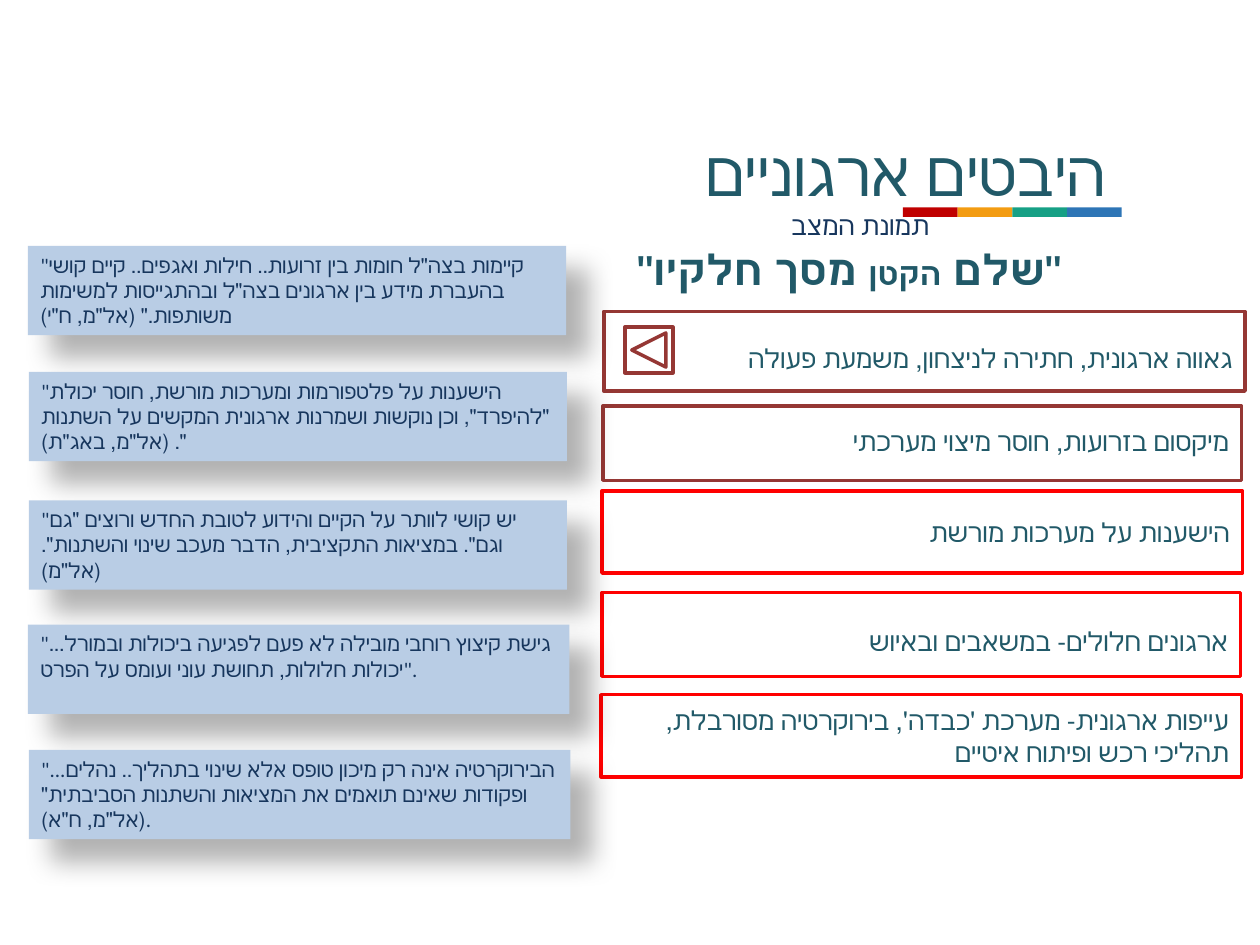
import dataclasses
import typing

import lxml.etree
import pptx
import pptx.dml.color
import pptx.enum.shapes
import pptx.enum.text
import pptx.oxml.ns
import pptx.util

Pt = pptx.util.Pt
RGBColor = pptx.dml.color.RGBColor
MSO_SHAPE = pptx.enum.shapes.MSO_SHAPE
ALIGN = pptx.enum.text.PP_ALIGN
ANCHOR = pptx.enum.text.MSO_ANCHOR
AUTO = pptx.enum.text.MSO_AUTO_SIZE
qn = pptx.oxml.ns.qn

TEAL = RGBColor(0x21, 0x59, 0x68)
NAVY = RGBColor(0x17, 0x36, 0x5D)
PALE_BLUE = RGBColor(0xB9, 0xCD, 0xE5)
WHITE = RGBColor(0xFF, 0xFF, 0xFF)
RED = RGBColor(0xFF, 0x00, 0x00)
BROWN = RGBColor(0x95, 0x37, 0x34)
STRIPES = [RGBColor(0xC0, 0x00, 0x00), RGBColor(0xF3, 0x9C, 0x12),
           RGBColor(0x16, 0xA0, 0x85), RGBColor(0x2E, 0x75, 0xB6)]


@dataclasses.dataclass
class Quote:
    left: float
    top: float
    width: float
    text: str


@dataclasses.dataclass
class Aspect:
    left: float
    top: float
    width: float
    height: float
    line: RGBColor
    text: str
    spacing: float = 1.0
    before: float = 7.5
    after: float = 6
    level: int = 0


QUOTES = [
    Quote(16, 140.5, 307.5, '"קיימות בצה"ל חומות בין זרועות.. חילות ואגפים.. קיים קושי בהעברת מידע '
          'בין ארגונים בצה"ל ובהתגייסות למשימות משותפות." (אל"מ, ח"י)'),
    Quote(16.5, 212.5, 307.5, '"הישענות על פלטפורמות ומערכות מורשת, חוסר יכולת "להיפרד", וכן נוקשות '
          'ושמרנות ארגונית המקשים על השתנות ". (אל"מ, באג"ת)'),
    Quote(16.5, 286, 307.5, '"יש קושי לוותר על הקיים והידוע לטובת החדש ורוצים "גם וגם". במציאות '
          'התקציבית, הדבר מעכב שינוי והשתנות". (אל"מ)'),
    Quote(16, 357, 309.5, '"גישת קיצוץ רוחבי מובילה לא פעם לפגיעה ביכולות ובמורל... יכולות חלולות, '
          'תחושת עוני ועומס על הפרט".'),
    Quote(16.5, 428.5, 309.5, '"...הבירוקרטיה אינה רק מיכון טופס אלא שינוי בתהליך.. נהלים ופקודות '
          'שאינם תואמים את המציאות והשתנות הסביבתית" (אל"מ, ח"א).'),
]

ASPECTS = [
    Aspect(345, 178, 366.5, 45.5, BROWN, "גאווה ארגונית, חתירה לניצחון, משמעת פעולה", 1.4),
    Aspect(344.5, 232, 365, 42.5, BROWN, "מיקסום בזרועות, חוסר מיצוי מערכתי", 0.9, 0, 3, 1),
    Aspect(344, 280.5, 366, 47, RED, "הישענות על מערכות מורשת"),
    Aspect(344, 338.5, 365, 48, RED, "ארגונים חלולים- במשאבים ובאיוש", 1.4),
    Aspect(343.5, 397, 366, 47, RED,
           "עייפות ארגונית- מערכת 'כבדה', בירוקרטיה מסורבלת, תהליכי רכש ופיתוח איטיים"),
]


def add_run(p: typing.Any, text: str, *, size: float, color: RGBColor,
            font: str = "Calibri", bold: bool = False) -> None:
    r = p.add_run()
    r.text = text
    r.font.size = Pt(size)
    r.font.name = font
    r.font.bold = bold
    r.font.color.rgb = color


def add_rect(shapes: typing.Any, left: float, top: float, width: float, height: float,
             fill: RGBColor, line: typing.Optional[RGBColor] = None) -> typing.Any:
    sp = shapes.add_shape(MSO_SHAPE.RECTANGLE, Pt(left), Pt(top), Pt(width), Pt(height))
    sp.shadow.inherit = False
    sp.fill.solid()
    sp.fill.fore_color.rgb = fill
    if line is None:
        sp.line.fill.background()
    else:
        sp.line.color.rgb = line
        sp.line.width = Pt(2)
    return sp


def add_shadow(sp: typing.Any) -> None:
    effects = sp._element.spPr.find(qn("a:effectLst"))
    shadow = lxml.etree.SubElement(effects, qn("a:outerShdw"), blurRad=str(Pt(15)),
                                   dist=str(Pt(18)), dir="2700000", algn="tl", rotWithShape="0")
    color = lxml.etree.SubElement(shadow, qn("a:srgbClr"), val="000000")
    lxml.etree.SubElement(color, qn("a:alpha"), val="30000")


def add_quote(shapes: typing.Any, quote: Quote) -> None:
    sp = add_rect(shapes, quote.left, quote.top, quote.width, 51, PALE_BLUE)
    add_shadow(sp)
    tf = sp.text_frame
    tf.word_wrap = True
    tf.auto_size = AUTO.SHAPE_TO_FIT_TEXT
    tf.vertical_anchor = ANCHOR.TOP
    p = tf.paragraphs[0]
    p.alignment = ALIGN.LEFT
    add_run(p, quote.text, size=12, color=NAVY)


def add_aspect(shapes: typing.Any, aspect: Aspect) -> None:
    sp = add_rect(shapes, aspect.left, aspect.top, aspect.width, aspect.height, WHITE, aspect.line)
    tf = sp.text_frame
    tf.word_wrap = True
    tf.vertical_anchor = ANCHOR.MIDDLE
    p = tf.paragraphs[0]
    p.alignment = ALIGN.RIGHT
    p.level = aspect.level
    p.line_spacing = aspect.spacing
    p.space_before = Pt(aspect.before)
    p.space_after = Pt(aspect.after)
    add_run(p, aspect.text, size=15, color=TEAL, font="Karla")


def add_text_box(shapes: typing.Any, left: float, top: float, width: float,
                 height: float) -> typing.Any:
    tf = shapes.add_textbox(Pt(left), Pt(top), Pt(width), Pt(height)).text_frame
    tf.word_wrap = True
    tf.auto_size = AUTO.SHAPE_TO_FIT_TEXT
    return tf.paragraphs[0]


def main() -> None:
    prs = pptx.Presentation()
    prs.slide_width, prs.slide_height = Pt(720), Pt(540)
    s = prs.slides.add_slide(prs.slide_layouts[5])
    shapes = s.shapes

    # Title
    title = shapes.title
    title.left, title.top, title.width, title.height = Pt(382.5), Pt(72.5), Pt(270), Pt(51)
    tf = title.text_frame
    tf.word_wrap = False
    tf.auto_size = AUTO.SHAPE_TO_FIT_TEXT
    tf.vertical_anchor = ANCHOR.TOP
    tf.paragraphs[0].alignment = ALIGN.CENTER
    add_run(tf.paragraphs[0], "היבטים ארגוניים", size=36, color=TEAL)

    # Coloured stripe under the title
    stripe = shapes.add_group_shape()
    for i, color in enumerate(STRIPES):
        add_rect(stripe.shapes, 516 + i * 31.25, 118.5, 31.25, 5.5, color)

    # Subtitle and heading
    p = add_text_box(shapes, 445, 116, 255.5, 25)
    add_run(p, "תמונת המצב", size=15, color=NAVY)
    p = add_text_box(shapes, 357, 135.5, 337.5, 36)
    for text, size in [('"שלם ', 24), ("הקטן", 18), (' מסך חלקיו"', 24)]:
        add_run(p, text, size=size, color=TEAL, font="Karla", bold=True)

    # Aspects on the right, quotes on the left
    for aspect in ASPECTS:
        add_aspect(shapes, aspect)
    for quote in QUOTES:
        add_quote(shapes, quote)

    # Forward button
    button = shapes.add_shape(MSO_SHAPE.ACTION_BUTTON_FORWARD_OR_NEXT,
                              Pt(357), Pt(187), Pt(27.5), Pt(26))
    button.shadow.inherit = False
    button.rotation = 180
    button.fill.background()
    button.line.color.rgb = BROWN
    button.line.width = Pt(2)

    prs.save("out.pptx")


if __name__ == "__main__":
    main()
